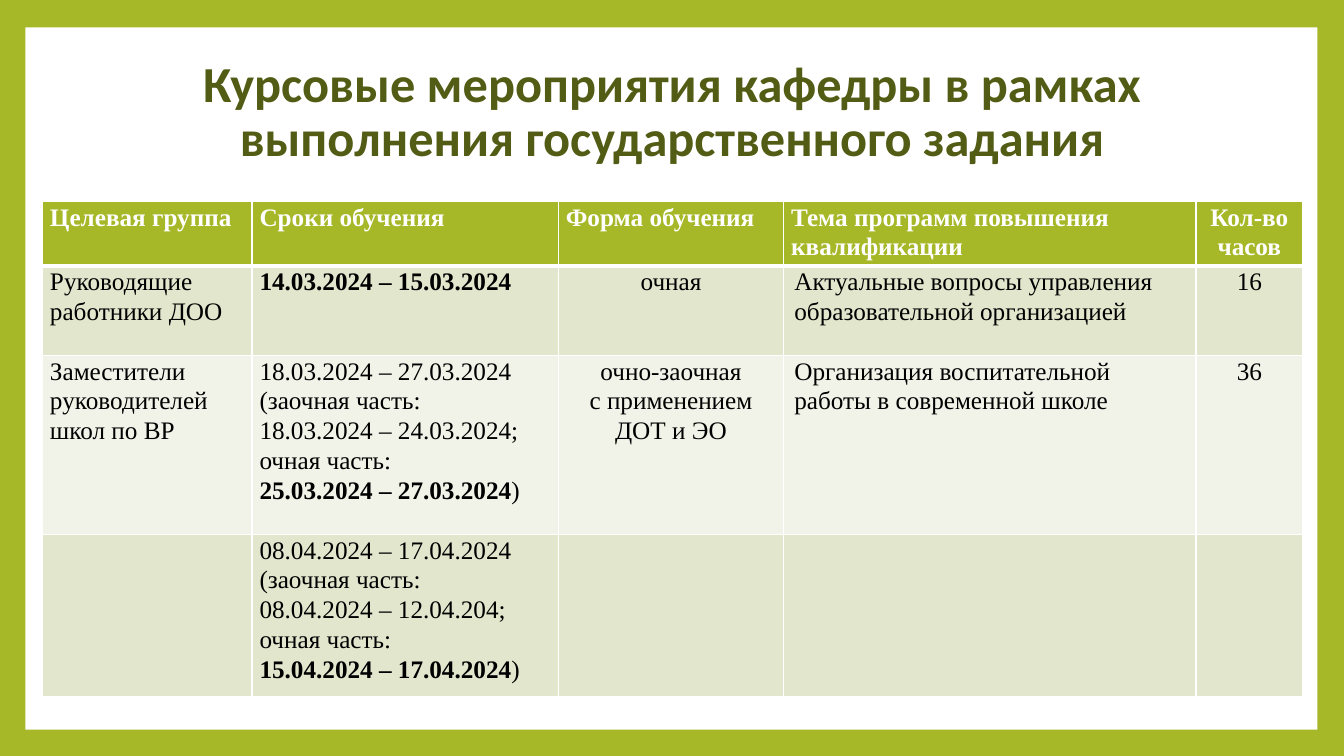
import pptx
import pptx.util
import pptx.dml.color
import pptx.enum.shapes
import pptx.enum.text
import pptx.oxml
import pptx.oxml.ns

Cm = pptx.util.Cm
Pt = pptx.util.Pt
RGBColor = pptx.dml.color.RGBColor
ALIGN = pptx.enum.text.PP_ALIGN
ANCHOR = pptx.enum.text.MSO_ANCHOR

GREEN = RGBColor(0xA6, 0xB7, 0x27)
OLIVE = RGBColor(0x53, 0x5C, 0x14)
BAND_DARK = RGBColor(0xE1, 0xE6, 0xCD)
BAND_LIGHT = RGBColor(0xF1, 0xF3, 0xE8)
WHITE = RGBColor(0xFF, 0xFF, 0xFF)
BLACK = RGBColor(0, 0, 0)

TITLE = "Курсовые мероприятия кафедры в рамках выполнения государственного задания"
COLUMN_WIDTHS = [5.28, 7.72, 5.68, 10.39, 2.69]
ROW_HEIGHTS = [1.5, 2.25, 4.51, 3.76]
DATES, FORM, TOPIC, HOURS = 1, 2, 3, 4
COURSES = [
    ["Целевая группа", "Сроки обучения", "Форма обучения",
     "Тема программ повышения квалификации", "Кол-во часов"],
    ["Руководящие работники ДОО", "14.03.2024 – 15.03.2024", "очная",
     "Актуальные вопросы управления образовательной организацией", "16"],
    ["Заместители руководителей школ по ВР",
     "18.03.2024 – 27.03.2024\n(заочная часть:\n18.03.2024 – 24.03.2024;\n"
     "очная часть:\n25.03.2024 – 27.03.2024)",
     "очно-заочная\nс применением ДОТ и ЭО",
     "Организация воспитательной работы в современной школе", "36"],
    ["", "08.04.2024 – 17.04.2024\n(заочная часть:\n08.04.2024 – 12.04.204;\n"
     "очная часть:\n15.04.2024 – 17.04.2024)", "", "", ""],
]


def style_span(span, font, size, color, bold):
    span.font.name = font
    span.font.size = Pt(size)
    span.font.color.rgb = color
    span.font.bold = bold


def add_panel(page):
    panel = page.shapes.add_shape(
        pptx.enum.shapes.MSO_SHAPE.RECTANGLE, Cm(0.64), Cm(0.69), Cm(32.56), Cm(17.7))
    panel.shadow.inherit = False
    panel.fill.solid()
    panel.fill.fore_color.rgb = WHITE
    panel.line.fill.background()


def add_title(page):
    box = page.shapes.add_textbox(Cm(3.23), Cm(0.97), Cm(27.43), Cm(3.76))
    frame = box.text_frame
    frame.word_wrap = True
    frame.vertical_anchor = ANCHOR.MIDDLE
    frame.text = TITLE
    para = frame.paragraphs[0]
    para.alignment = ALIGN.CENTER
    para.line_spacing = 0.9
    style_span(para.runs[0], "Calibri", 36, OLIVE, True)


def set_borders(cell, bottom_width):
    properties = cell._tc.get_or_add_tcPr()
    widths = {"lnL": 1, "lnR": 1, "lnT": 1, "lnB": bottom_width}
    for position, (side, width) in enumerate(widths.items()):
        properties.insert(position, pptx.oxml.parse_xml(
            f'<a:{side} {pptx.oxml.ns.nsdecls("a")} w="{Pt(width)}">'
            f'<a:solidFill><a:srgbClr val="{WHITE}"/></a:solidFill></a:{side}>'))


def fill_cell(cell, text, row, column):
    header = row == 0
    cell.margin_left = cell.margin_right = Cm(0.19)
    cell.margin_top = cell.margin_bottom = 0
    cell.fill.solid()
    cell.fill.fore_color.rgb = GREEN if header else BAND_DARK if row % 2 else BAND_LIGHT
    set_borders(cell, 3 if header else 1)
    cell.text_frame.text = text
    centred = column == HOURS or (column == FORM and not header)
    for para in cell.text_frame.paragraphs:
        para.line_spacing = 1.07
        para.alignment = ALIGN.CENTER if centred else ALIGN.LEFT
        if column == TOPIC and not header:
            para._p.get_or_add_pPr().set("marL", str(Cm(0.08)))
        closing = para.text.endswith(")")
        if closing:
            para.text = para.text[:-1]
            para.add_run().text = ")"
        in_person = closing or (row == 1 and column == DATES)
        for span in para.runs:
            bold = header or (in_person and span.text != ")")
            style_span(span, "Times New Roman", 18, WHITE if header else BLACK, bold)


def add_courses(page):
    table = page.shapes.add_table(
        len(ROW_HEIGHTS), len(COLUMN_WIDTHS), Cm(1.07), Cm(5.08),
        Cm(sum(COLUMN_WIDTHS)), Cm(sum(ROW_HEIGHTS))).table
    for column, width in zip(table.columns, COLUMN_WIDTHS):
        column.width = Cm(width)
    for row, height in zip(table.rows, ROW_HEIGHTS):
        row.height = Cm(height)
    for row, texts in enumerate(COURSES):
        for column, text in enumerate(texts):
            fill_cell(table.cell(row, column), text, row, column)


def main():
    deck = pptx.Presentation()
    deck.slide_width = Cm(33.87)
    deck.slide_height = Cm(19.05)
    page = deck.slides.add_slide(deck.slide_layouts[6])
    page.background.fill.solid()
    page.background.fill.fore_color.rgb = GREEN
    add_panel(page)
    add_title(page)
    add_courses(page)
    deck.save("out.pptx")


if __name__ == "__main__":
    main()
